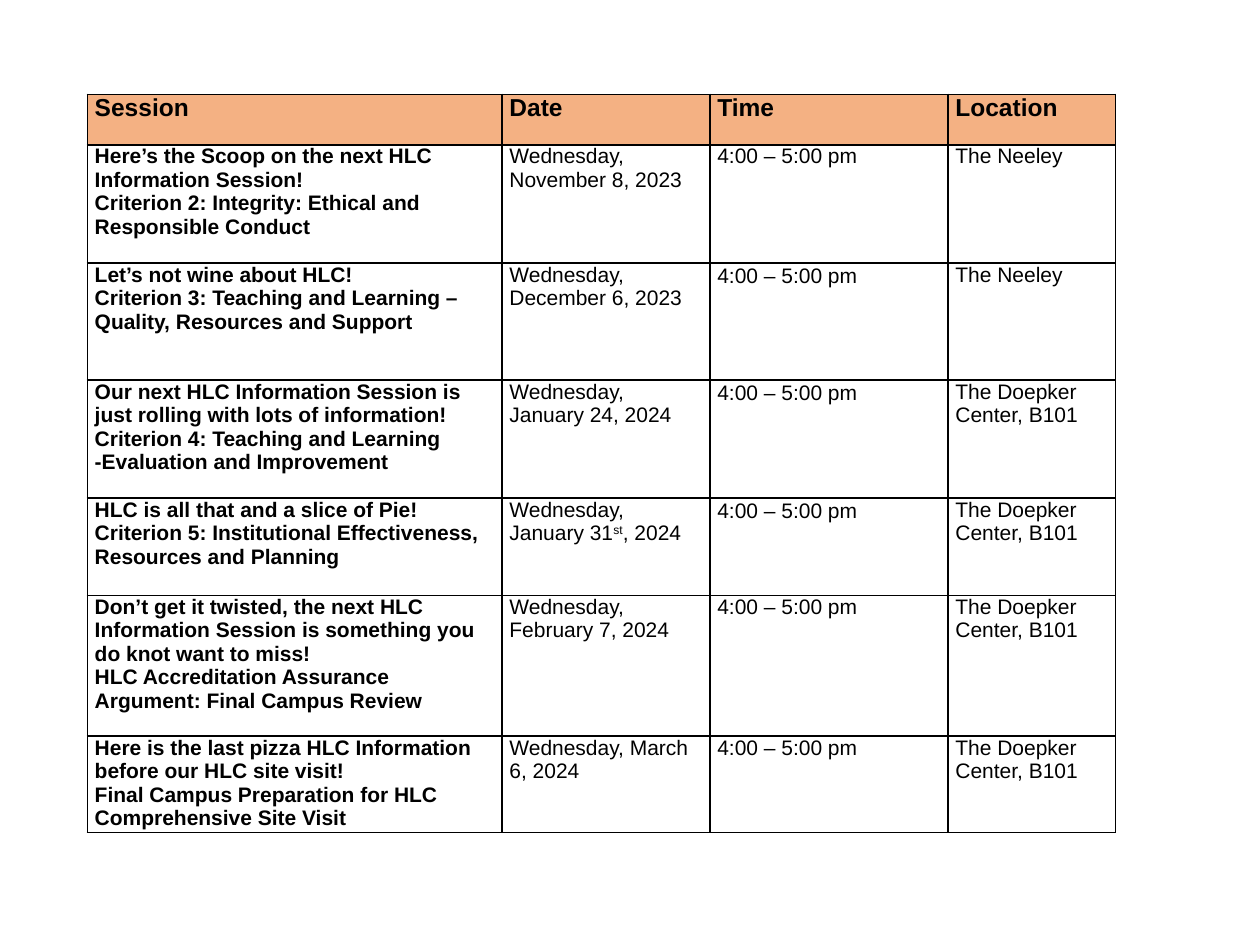
from lxml import etree
from pptx import Presentation
from pptx import util as u
from pptx.dml.color import RGBColor
from pptx.oxml.ns import qn

BLACK = RGBColor(0x00, 0x00, 0x00)
PEACH = RGBColor(0xF4, 0xB1, 0x83)

HOURS = "4:00 – 5:00 pm"
NEELEY = "The Neeley"
DOEPKER = "The Doepker Center, B101"
HEADINGS = ("Session", "Date", "Time", "Location")
SESSIONS = [
    ("Here’s the Scoop on the next HLC Information Session!\n"
     "Criterion 2: Integrity: Ethical and Responsible Conduct",
     "Wednesday, November 8, 2023", HOURS, NEELEY),
    ("Let’s not wine about HLC!\n"
     "Criterion 3: Teaching and Learning – Quality, Resources and Support",
     "Wednesday, December 6, 2023", HOURS, NEELEY),
    ("Our next HLC Information Session is just rolling with lots of information!\n"
     "Criterion 4: Teaching and Learning -Evaluation and Improvement",
     "Wednesday, January 24, 2024", HOURS, DOEPKER),
    ("HLC is all that and a slice of Pie!\n"
     "Criterion 5: Institutional Effectiveness, Resources and Planning",
     "Wednesday, January 31^st^, 2024", HOURS, DOEPKER),
    ("Don’t get it twisted, the next HLC Information Session is something "
     "you do knot want to miss!\n"
     "HLC Accreditation Assurance Argument: Final Campus Review",
     "Wednesday, February 7, 2024", HOURS, DOEPKER),
    ("Here is the last pizza HLC Information before our HLC site visit!\n"
     "Final Campus Preparation for HLC Comprehensive Site Visit",
     "Wednesday, March 6, 2024", HOURS, DOEPKER),
]
COLUMN_WIDTHS = (8.36, 4.19, 4.8, 3.38)
ROW_HEIGHTS = (1.02, 2.38, 2.36, 2.38, 1.96, 2.84, 1.94)
SPACED_TIME_ROWS = (2, 3, 4)


def add_borders(cell):
    properties = cell._tc.get_or_add_tcPr()
    for side in ("a:lnL", "a:lnR", "a:lnT", "a:lnB"):
        border = etree.SubElement(properties, qn(side), w=str(u.Pt(1)))
        fill = etree.SubElement(border, qn("a:solidFill"))
        etree.SubElement(fill, qn("a:srgbClr"), val=str(BLACK))


def write_cell(cell, content, size, bold):
    cell.margin_left = cell.margin_right = u.Cm(0.15)
    cell.margin_top = cell.margin_bottom = 0
    frame = cell.text_frame
    for number, line in enumerate(content.split("\n")):
        paragraph = frame.add_paragraph() if number else frame.paragraphs[0]
        for part, words in enumerate(line.split("^")):
            run = paragraph.add_run()
            run.text = words
            if part % 2:
                run._r.get_or_add_rPr().set("baseline", "30000")
        font = paragraph.font
        font.name, font.size, font.bold = "Arial", u.Pt(size), bold
        font.color.rgb = BLACK


prs = Presentation()
prs.slide_width, prs.slide_height = u.Cm(25.4), u.Cm(19.05)
slide = prs.slides.add_slide(prs.slide_layouts[6])

rows = [HEADINGS] + SESSIONS
schedule = slide.shapes.add_table(
    len(rows), len(HEADINGS), u.Cm(1.76), u.Cm(1.9),
    u.Cm(sum(COLUMN_WIDTHS)), u.Cm(sum(ROW_HEIGHTS))).table
schedule.horz_banding = schedule.first_row = False
for column, width in zip(schedule.columns, COLUMN_WIDTHS):
    column.width = u.Cm(width)

for r, (entries, height) in enumerate(zip(rows, ROW_HEIGHTS)):
    schedule.rows[r].height = u.Cm(height)
    heading = r == 0
    for c, content in enumerate(entries):
        cell = schedule.cell(r, c)
        write_cell(cell, content, 14 if heading else 12, heading or c == 0)
        add_borders(cell)
        if heading:
            cell.fill.solid()
            cell.fill.fore_color.rgb = PEACH
        else:
            cell.fill.background()

for r in SPACED_TIME_ROWS:
    schedule.cell(r, HEADINGS.index("Time")).text_frame.paragraphs[0].line_spacing = 1.07

prs.save("out.pptx")
